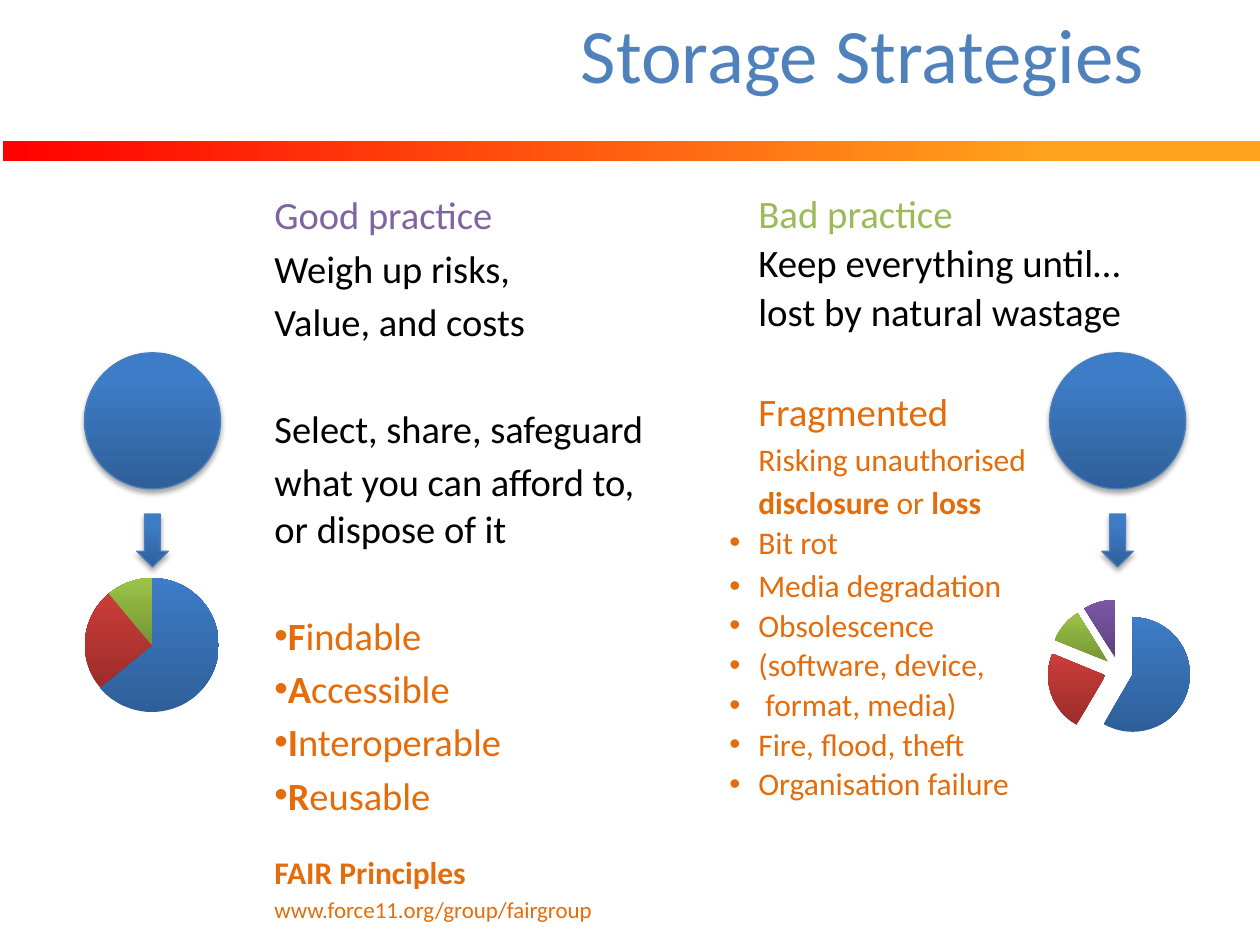
from lxml.etree import SubElement
from pptx import Presentation
from pptx.chart.data import CategoryChartData
from pptx.dml.color import RGBColor
from pptx.enum.chart import XL_CHART_TYPE
from pptx.enum.shapes import MSO_SHAPE
from pptx.enum.text import MSO_ANCHOR, PP_ALIGN
from pptx.oxml import parse_xml
from pptx.oxml.ns import nsdecls, qn
from pptx.util import Inches, Pt

BLACK = RGBColor(0x00, 0x00, 0x00)
BLUE = RGBColor(0x4F, 0x81, 0xBD)
GREEN = RGBColor(0x9B, 0xBB, 0x59)
PURPLE = RGBColor(0x80, 0x64, 0xA2)
ORANGE = RGBColor(0xE4, 0x6C, 0x0A)
RED = RGBColor(0xFF, 0x00, 0x00)
AMBER = RGBColor(0xFF, 0xA4, 0x1D)
EDGE = RGBColor(0x4B, 0x7E, 0xBC)
SHADES = [
    (RGBColor(0x2F, 0x5F, 0x99), RGBColor(0x3D, 0x7C, 0xC7)),
    (RGBColor(0x9B, 0x2D, 0x2A), RGBColor(0xCB, 0x3D, 0x3A)),
    (RGBColor(0x76, 0x95, 0x35), RGBColor(0x9B, 0xC3, 0x48)),
    (RGBColor(0x5D, 0x41, 0x7E), RGBColor(0x7B, 0x57, 0xA8)),
]

GOOD = [
    ("Good practice", dict(color=PURPLE)),
    ("Weigh up risks,", {}),
    ("Value, and costs", {}),
    ("Select, share, safeguard", dict(gap=35)),
    ("what you can afford to, or dispose of it", {}),
    ("*F*indable", dict(color=ORANGE, gap=35, hang=0)),
    ("*A*ccessible", dict(color=ORANGE, hang=0)),
    ("*I*nteroperable", dict(color=ORANGE, hang=0)),
    ("*R*eusable", dict(color=ORANGE, hang=0)),
    ("*FAIR Principles*", dict(color=ORANGE, size=18, gap=20)),
    ("www.force11.org/group/fairgroup",
     dict(color=ORANGE, size=13.1, gap=2.6)),
]
TIGHT = dict(size=22.2, line=0.9)
RISK = dict(color=ORANGE, size=18, gap=3.2)
ITEM = dict(RISK, hang=-0.23)
BAD = [
    ("Bad practice", dict(color=GREEN, size=22.2)),
    ("Keep everything until…", TIGHT),
    ("lost by natural wastage", TIGHT),
    ("Fragmented", dict(TIGHT, color=ORANGE, gap=33)),
    ("Risking unauthorised", RISK),
    ("*disclosure* or *loss*", RISK),
    ("Bit rot", dict(ITEM, line=0.9)),
    ("Media degradation", ITEM),
] + [(text, dict(ITEM, line=0.9)) for text in (
    "Obsolescence", "(software, device,", " format, media)",
    "Fire, flood, theft", "Organisation failure")]


def apply(item, form):
    for key, value in form.items():
        setattr(item, key, value)


def place(item, box):
    names = ("left", "top", "width", "height")
    apply(item, dict(zip(names, map(Inches, box))))


def blend(fill, tones, angle, end=1):
    fill.gradient()
    fill.gradient_angle = angle
    for stop, tone, spot in zip(fill.gradient_stops, tones, (0, end)):
        stop.color.rgb = tone
        stop.position = spot


def add_title(slide, text):
    title = slide.shapes.title
    place(title, (0.92, 0, 8.26, 0.83))
    frame = title.text_frame
    frame.text = text
    frame.vertical_anchor = MSO_ANCHOR.MIDDLE
    para = frame.paragraphs[0]
    para.alignment = PP_ALIGN.RIGHT
    apply(para.runs[0].font, dict(name="Calibri", size=Pt(44)))
    para.runs[0].font.color.rgb = BLUE


def add_band(slide):
    band = slide.shapes.add_shape(
        MSO_SHAPE.RECTANGLE, *map(Inches, (0.02, 1.12, 9.98, 0.16)))
    band.shadow.inherit = False
    band.line.fill.background()
    blend(band.fill, (RED, AMBER), 0, 0.84)


def add_para(para, text, color=BLACK, size=22, gap=4, line=1, hang=None):
    props = para._p.get_or_add_pPr()
    props.set("marL", str(Inches(0.5)))
    props.set("indent", str(Inches(hang or 0)))
    if hang is not None:
        SubElement(props, qn("a:buFont")).set("typeface", "Arial")
        SubElement(props, qn("a:buChar")).set("char", "•")
    apply(para, dict(space_before=Pt(gap), line_spacing=line))
    for spot, part in enumerate(text.split("*")):
        if part:
            run = para.add_run()
            run.text = part
            apply(run.font, dict(
                name="Calibri", size=Pt(size), bold=spot % 2 == 1))
            run.font.color.rgb = color


def add_text(slide, box, rows):
    frame = slide.shapes.add_textbox(*map(Inches, box)).text_frame
    frame.word_wrap = True
    for spot, (text, form) in enumerate(rows):
        para = frame.add_paragraph() if spot else frame.paragraphs[0]
        add_para(para, text, **(form if spot else dict(form, gap=0)))


def add_solid(slide, kind, box):
    shape = slide.shapes.add_shape(kind, *map(Inches, box))
    blend(shape.fill, SHADES[0], 90, 0.8)
    shape.line.color.rgb = EDGE
    shape.line.width = Pt(0.75)
    shape.shadow.inherit = False
    shape._element.spPr.find(qn("a:effectLst")).append(parse_xml(
        f'<a:outerShdw {nsdecls("a")} blurRad="{Pt(3.1)}" dist="{Pt(1.8)}" '
        'dir="5400000" rotWithShape="0"><a:srgbClr val="000000">'
        '<a:alpha val="35000"/></a:srgbClr></a:outerShdw>'))


def add_pie(slide, box, values, burst=0):
    data = CategoryChartData()
    data.categories = [str(n + 1) for n in range(len(values))]
    data.add_series("Series 1", values)
    chart = slide.shapes.add_chart(
        XL_CHART_TYPE.PIE, *map(Inches, box), data).chart
    apply(chart, dict(has_legend=False, has_title=False))
    apply(chart.font, dict(name="Calibri", size=Pt(18)))
    chart.font.color.rgb = BLACK
    plot = chart.plots[0]
    plot.vary_by_categories = True
    series = plot.series[0]
    for spot, tones in enumerate(SHADES[:len(values)]):
        blend(series.points[spot].format.fill, tones, 90)
    if burst:
        series._element.find(qn("c:dPt")).addprevious(parse_xml(
            f'<c:explosion {nsdecls("c")} val="{burst}"/>'))
    area = chart._chartSpace.chart.plotArea
    for old in area.findall(qn("c:layout")):
        area.remove(old)
    layout = parse_xml(f'<c:layout {nsdecls("c")}><c:manualLayout/></c:layout>')
    marks = dict(layoutTarget="inner", xMode="edge", yMode="edge",
                 x=0.1, y=0.1, w=0.8, h=0.8)
    for key, value in marks.items():
        SubElement(layout[0], qn("c:" + key)).set("val", str(value))
    area.insert(0, layout)


def main():
    deck = Presentation()
    apply(deck, dict(slide_width=Inches(10), slide_height=Inches(7.5)))
    slide = deck.slides.add_slide(deck.slide_layouts[5])
    add_band(slide)
    add_title(slide, "Storage Strategies")
    add_text(slide, (1.58, 1.47, 3.75, 5.75), GOOD)
    add_text(slide, (5.42, 1.46, 3.92, 5.25), BAD)
    for left in (0.67, 8.33):
        add_solid(slide, MSO_SHAPE.OVAL, (left, 2.8, 1.08, 1.08))
        add_solid(slide, MSO_SHAPE.DOWN_ARROW, (left + 0.415, 4.08, 0.25, 0.42))
    add_pie(slide, (0.54, 4.41, 1.33, 1.42), (64, 25, 11))
    add_pie(slide, (8.17, 4.49, 1.42, 1.67), (59, 23, 10, 9), 25)
    deck.save("out.pptx")


if __name__ == "__main__":
    main()
